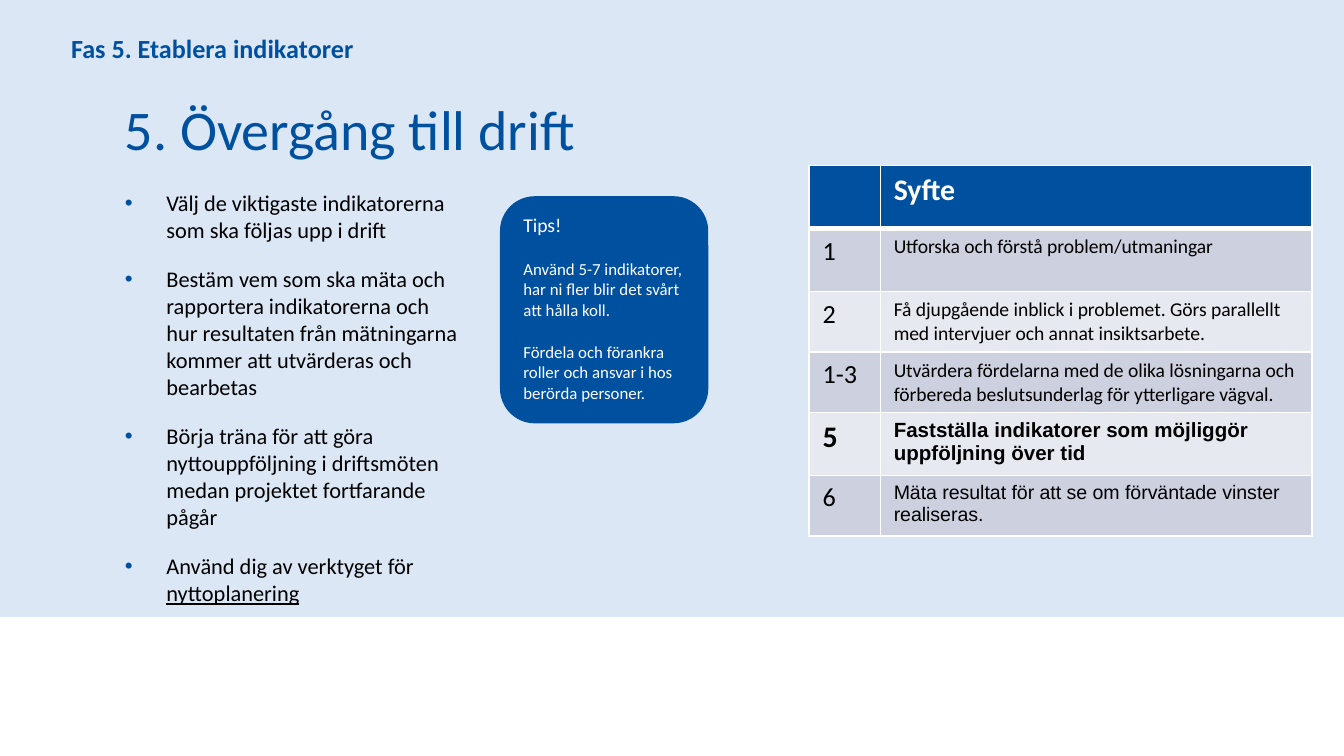
from lxml import etree
from pptx import Presentation
from pptx.dml.color import RGBColor
from pptx.enum.shapes import MSO_SHAPE
from pptx.enum.text import MSO_ANCHOR, PP_ALIGN
from pptx.oxml.ns import qn
from pptx.util import Inches, Pt

RECTANGLE, ROUNDED = MSO_SHAPE.RECTANGLE, MSO_SHAPE.ROUNDED_RECTANGLE
TOP, MIDDLE = MSO_ANCHOR.TOP, MSO_ANCHOR.MIDDLE
LEFT = PP_ALIGN.LEFT
BLUE, PALE, WHITE, BLACK = "0050A0", "DCE7F6", "FFFFFF", "000000"
BANDS = ("CCD0DF", "E7E9F0")

BULLETS = [
    ["Välj de viktigaste indikatorerna som ska följas upp i drift"],
    ["Bestäm vem som ska mäta och rapportera indikatorerna och hur "
     "resultaten från mätningarna kommer att utvärderas och bearbetas"],
    ["Börja träna för att göra nyttouppföljning i driftsmöten medan "
     "projektet fortfarande pågår"],
    ["Använd dig av verktyget för ", "nyttoplanering"],
]
TIPS = [
    ("Tips!", 10.5),
    ("Använd 5-7 indikatorer, har ni fler blir det svårt att hålla koll.", 9),
    ("Fördela och förankra roller och ansvar i hos berörda personer.", 9),
]
PURPOSES = [
    ("1", "Utforska och förstå problem/utmaningar", {}, {}),
    ("2", "Få djupgående inblick i problemet. Görs parallellt med intervjuer "
     "och annat insiktsarbete.", {}, {}),
    ("1-3", "Utvärdera fördelarna med de olika lösningarna och förbereda "
     "beslutsunderlag för ytterligare vägval.", {}, {}),
    ("5", "Fastställa indikatorer som möjliggör uppföljning över tid",
     {"size": 16, "bold": True}, {"size": 11, "bold": True, "font": "Arial"}),
    ("6", "Mäta resultat för att se om förväntade vinster realiseras.",
     {}, {"font": "Arial"}),
]


def rgb(value):
    """Turn a hex string into a colour."""
    return RGBColor.from_string(value)


def write(para, text, size=12, color=BLACK, font="Calibri", bold=False, underline=False):
    """Append formatted text to a paragraph."""
    span = para.add_run()
    span.text = text
    span.font.size = Pt(size)
    span.font.name = font
    span.font.bold = bold
    span.font.underline = underline
    span.font.color.rgb = rgb(color)


def next_para(frame, index, before=0, after=0):
    """Return a left-aligned paragraph, with no space before the first one."""
    para = frame.add_paragraph() if index else frame.paragraphs[0]
    para.alignment = LEFT
    para.space_before = Pt(before if index else 0)
    para.space_after = Pt(after)
    return para


def place(box, left, top, width, height):
    """Set the position and size of a box."""
    box.left, box.top = Inches(left), Inches(top)
    box.width, box.height = Inches(width), Inches(height)


def add_panel(page, kind, area, color):
    """Add a filled shape without outline or shadow."""
    panel = page.shapes.add_shape(kind, *map(Inches, area))
    panel.shadow.inherit = False
    panel.fill.solid()
    panel.fill.fore_color.rgb = rgb(color)
    panel.line.fill.background()
    return panel


def add_heading(box, text, size, bold=False):
    """Write a blue, vertically centred heading into a box."""
    frame = box.text_frame
    frame.word_wrap = True
    frame.vertical_anchor = MIDDLE
    write(next_para(frame, 0), text, size=size, color=BLUE, bold=bold)


def add_bullet(para):
    """Give a paragraph a hanging blue bullet."""
    properties = para._p.get_or_add_pPr()
    properties.set("marL", str(Inches(0.31)))
    properties.set("indent", str(Inches(-0.31)))
    color = etree.SubElement(properties, qn("a:buClr"))
    etree.SubElement(color, qn("a:srgbClr"), val=BLUE)
    etree.SubElement(properties, qn("a:buFont"), typeface="Arial")
    etree.SubElement(properties, qn("a:buChar"), char="•")


def add_bullets(page):
    """Add the list of steps, underlining the tool name."""
    box = page.shapes.add_textbox(*map(Inches, (0.83, 1.36, 2.72, 2.85)))
    frame = box.text_frame
    frame.word_wrap = True
    for index, parts in enumerate(BULLETS):
        para = next_para(frame, index, before=6, after=6)
        add_bullet(para)
        for position, text in enumerate(parts):
            write(para, text, underline=position > 0)


def add_tips(page):
    """Add the rounded tips panel."""
    frame = add_panel(page, ROUNDED, (3.72, 1.46, 1.55, 1.69), BLUE).text_frame
    frame.word_wrap = True
    frame.vertical_anchor = TOP
    for index, (text, size) in enumerate(TIPS):
        write(next_para(frame, index, before=12), text, size=size, color=WHITE)


def style_cell(cell, color, bottom=1):
    """Fill a cell and draw its white borders."""
    cell.fill.solid()
    cell.fill.fore_color.rgb = rgb(color)
    properties = cell._tc.get_or_add_tcPr()
    widths = {"a:lnL": 1, "a:lnR": 1, "a:lnT": 1, "a:lnB": bottom}
    for index, (tag, width) in enumerate(widths.items()):
        line = etree.Element(qn(tag), w=str(Pt(width)))
        fill = etree.SubElement(line, qn("a:solidFill"))
        etree.SubElement(fill, qn("a:srgbClr"), val=WHITE)
        properties.insert(index, line)


def add_purposes(page):
    """Add the table of phases and purposes."""
    heights = [0.47, 0.47] + [0.45] * 4
    area = map(Inches, (6.02, 1.23, 3.74, sum(heights)))
    table = page.shapes.add_table(len(heights), 2, *area).table
    table.first_row = table.horz_banding = False
    for column, width in zip(table.columns, (0.53, 3.21)):
        column.width = Inches(width)
    for row, height in zip(table.rows, heights):
        row.height = Inches(height)
    for column in range(2):
        style_cell(table.cell(0, column), BLUE, bottom=3)
    header = table.cell(0, 1).text_frame.paragraphs[0]
    write(header, "Syfte", size=16, color=WHITE, bold=True)
    for row, (phase, purpose, phase_style, purpose_style) in enumerate(PURPOSES, 1):
        entries = (
            (phase, {"size": 14, **phase_style}),
            (purpose, {"size": 10.5, **purpose_style}),
        )
        for column, (text, style) in enumerate(entries):
            cell = table.cell(row, column)
            style_cell(cell, BANDS[(row - 1) % 2])
            write(cell.text_frame.paragraphs[0], text, **style)


def main():
    """Build the slide and save it."""
    deck = Presentation()
    deck.slide_width = Inches(10)
    deck.slide_height = deck.slide_width * 9 // 16
    page = deck.slides.add_slide(deck.slide_layouts[5])
    backdrop = add_panel(page, RECTANGLE, (0, 0, 10, 4.59), PALE)
    page.shapes._spTree.insert(2, backdrop._element)
    title = page.shapes.title
    place(title, 0.83, 0.63, 8.43, 0.64)
    add_heading(title, "5. Övergång till drift", 30)
    add_bullets(page)
    phase = page.shapes.add_textbox(*map(Inches, (0.43, 0.27, 8.82, 0.18)))
    add_heading(phase, "Fas 5. Etablera indikatorer", 14, bold=True)
    add_tips(page)
    add_purposes(page)
    deck.save("out.pptx")


if __name__ == "__main__":
    main()
